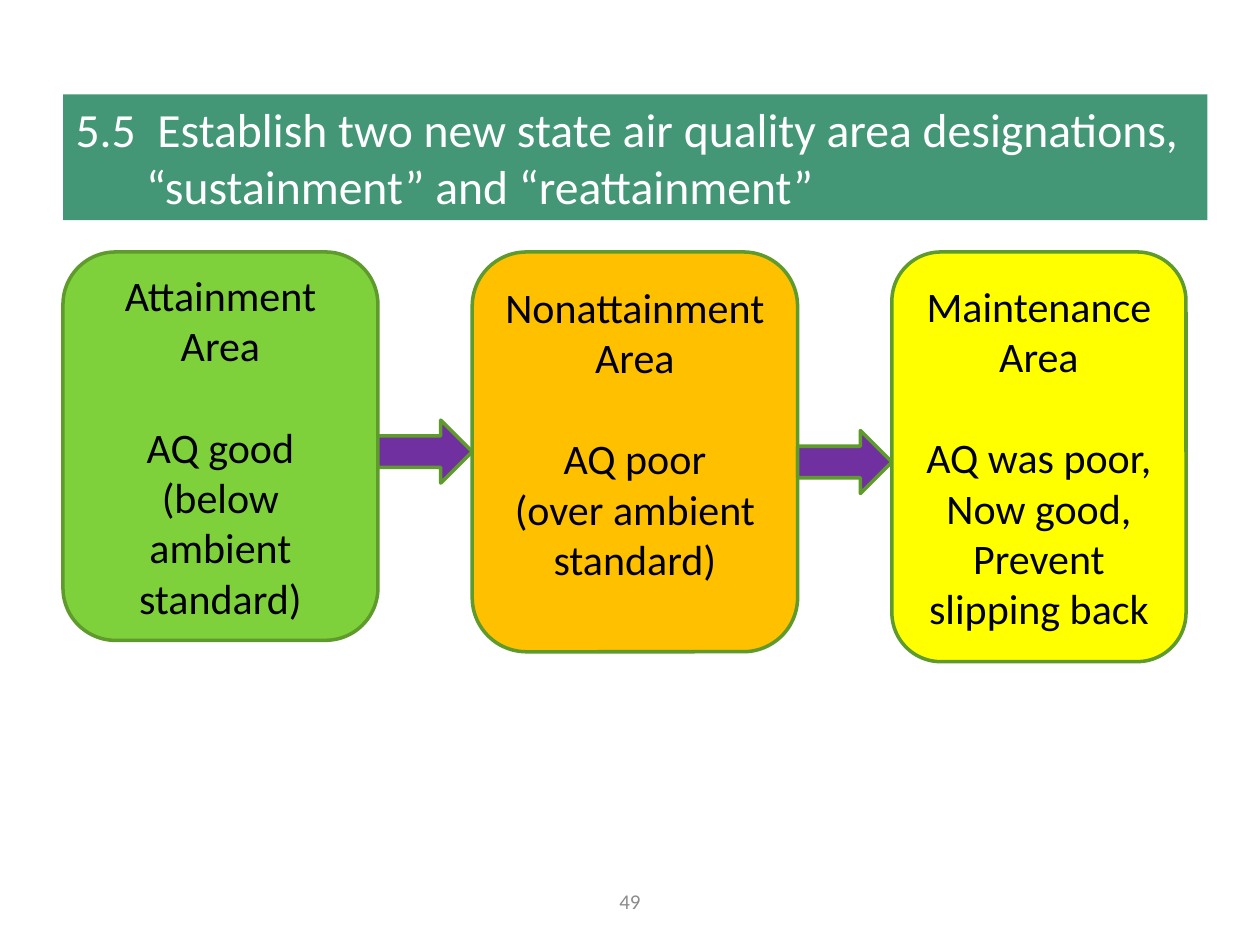
import pptx
import pptx.util
from pptx.dml.color import RGBColor
from pptx.enum.shapes import MSO_SHAPE
from pptx.enum.text import MSO_ANCHOR, MSO_AUTO_SIZE, PP_ALIGN
from pptx.util import Cm

TEAL = RGBColor(0x43, 0x97, 0x77)
GREEN = RGBColor(0x7F, 0xD1, 0x3B)
ORANGE = RGBColor(0xFF, 0xC0, 0x00)
YELLOW = RGBColor(0xFF, 0xFF, 0x00)
PURPLE = RGBColor(0x70, 0x30, 0xA0)
OUTLINE = RGBColor(0x5E, 0x9B, 0x2C)
GREY = RGBColor(0x8C, 0x8C, 0x8C)
WHITE = RGBColor(0xFF, 0xFF, 0xFF)
BLACK = RGBColor(0x00, 0x00, 0x00)

FONT = "Calibri"
LEFT = 1.27
GAP = 1.9
ARROW_HEIGHT = 1.27

AREAS = [
    (6.35, 7.83, GREEN, 0.13,
     ["Attainment Area", "AQ good", "(below ambient standard)"]),
    (6.56, 8.06, ORANGE, 0.9,
     ["Nonattainment Area", "AQ poor", "(over ambient standard)"]),
    (5.93, 8.26, YELLOW, 0.13,
     ["Maintenance Area", "AQ was poor,", "Now good,", "Prevent slipping back"]),
]
ARROW_TOPS = [3.39, 3.6]


def add_text(para, text, size, color, align):
    """Add one formatted run to a paragraph."""
    para.alignment = align
    span = para.add_run()
    span.text = text
    span.font.name = FONT
    span.font.size = pptx.util.Pt(size)
    span.font.color.rgb = color


def add_outlined(page, kind, left, top, width, height, color):
    """Add a filled preset shape with the shared green outline."""
    shape = page.shapes.add_shape(kind, Cm(left), Cm(top), Cm(width), Cm(height))
    shape.shadow.inherit = False
    shape.fill.solid()
    shape.fill.fore_color.rgb = color
    shape.line.color.rgb = OUTLINE
    shape.line.width = pptx.util.Pt(2)
    return shape


def add_heading(page, left, top, width, height):
    """Place the title in its teal band with a hanging indent."""
    title = page.shapes.title
    title.left, title.top = Cm(left), Cm(top)
    title.width, title.height = Cm(width), Cm(height)
    title.fill.solid()
    title.fill.fore_color.rgb = TEAL
    frame = title.text_frame
    frame.word_wrap = True
    frame.auto_size = MSO_AUTO_SIZE.NONE
    frame.vertical_anchor = MSO_ANCHOR.MIDDLE
    para = frame.paragraphs[0]
    para.space_after = pptx.util.Pt(6)
    properties = para._p.get_or_add_pPr()
    properties.set("marL", str(Cm(1.42)))
    properties.set("indent", str(-Cm(1.42)))
    add_text(para, "5.5  Establish two new state air quality area designations, "
             "“sustainment” and “reattainment”", 27.2, WHITE, PP_ALIGN.LEFT)


def add_area(page, left, top, width, height, color, bottom_inset, lines):
    """Place one rounded area box, its heading set apart from its details."""
    box = add_outlined(page, MSO_SHAPE.ROUNDED_RECTANGLE,
                       left, top, width, height, color)
    frame = box.text_frame
    frame.word_wrap = True
    frame.vertical_anchor = MSO_ANCHOR.MIDDLE
    frame.margin_bottom = Cm(bottom_inset)
    for index, line in enumerate(lines):
        para = frame.add_paragraph() if index else frame.paragraphs[0]
        add_text(para, line, 24, BLACK, PP_ALIGN.CENTER)
    frame.paragraphs[0].space_after = pptx.util.Pt(29)


def add_flow(page, left, top):
    """Place the area boxes in a row, joined by arrows that fill the gaps."""
    for index, (width, height, color, inset, lines) in enumerate(AREAS):
        add_area(page, left, top, width, height, color, inset, lines)
        left += width
        if index < len(ARROW_TOPS):
            add_outlined(page, MSO_SHAPE.RIGHT_ARROW, left,
                         top + ARROW_TOPS[index], GAP, ARROW_HEIGHT, PURPLE)
        left += GAP


def add_page_number(page, left, top, width, height):
    """Place the centred page number."""
    box = page.shapes.add_textbox(Cm(left), Cm(top), Cm(width), Cm(height))
    frame = box.text_frame
    frame.word_wrap = True
    frame.vertical_anchor = MSO_ANCHOR.MIDDLE
    add_text(frame.paragraphs[0], "49", 12, GREY, PP_ALIGN.CENTER)


def main():
    """Build the slide and save it."""
    deck = pptx.Presentation()
    deck.slide_width, deck.slide_height = Cm(25.4), Cm(19.05)
    page = deck.slides.add_slide(deck.slide_layouts.get_by_name("Title Only"))
    add_heading(page, LEFT, 1.9, 23.07, 2.54)
    add_flow(page, LEFT, 5.08)
    add_page_number(page, 8.68, 17.66, 8.04, 1.01)
    deck.save("out.pptx")


if __name__ == "__main__":
    main()
